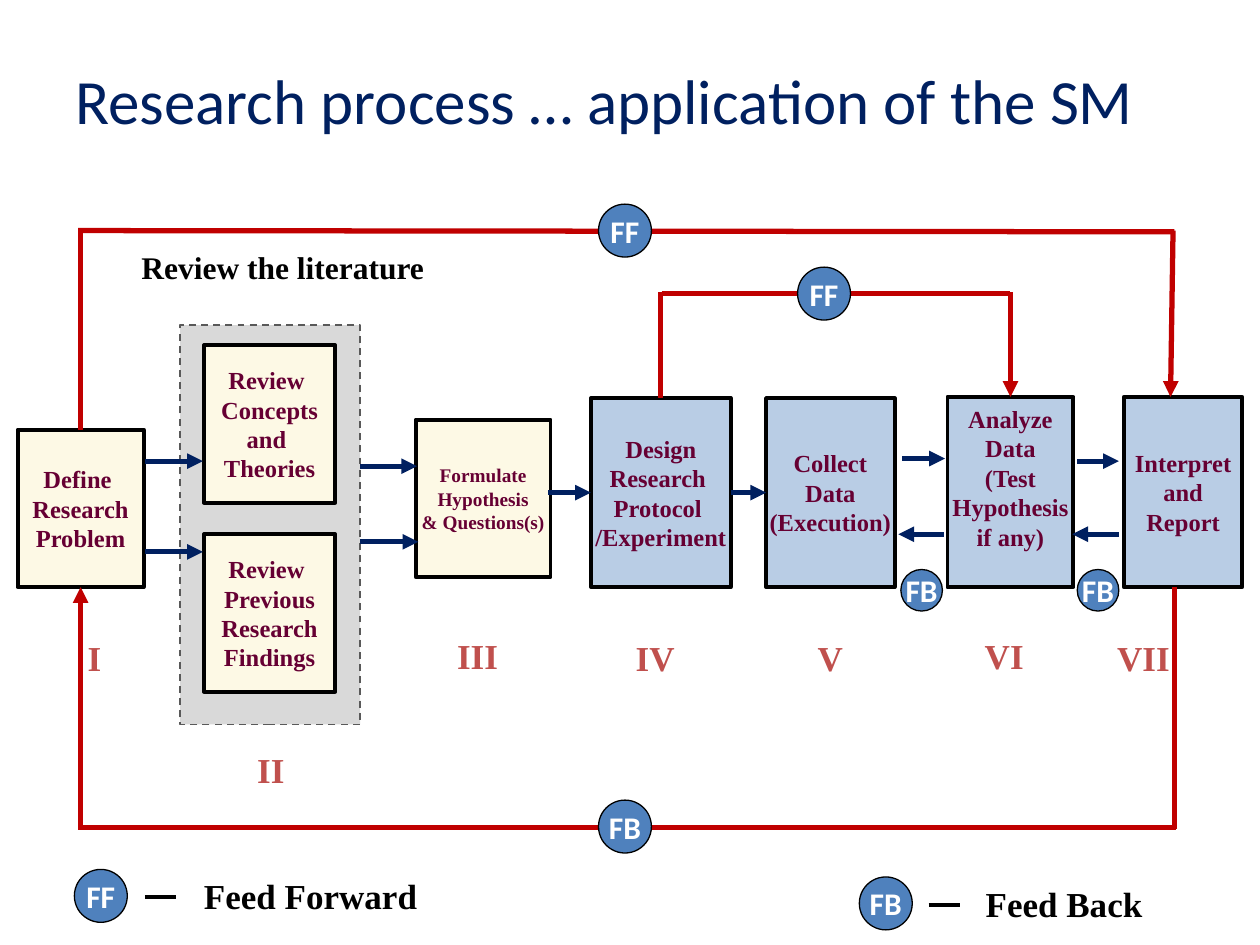
from pptx import Presentation
from pptx.dml.color import RGBColor
from pptx.enum.dml import MSO_LINE
from pptx.enum.shapes import MSO_CONNECTOR, MSO_SHAPE
from pptx.enum.text import MSO_ANCHOR, PP_ALIGN
from pptx.oxml.ns import qn
from pptx.util import Inches, Pt
from lxml.etree import SubElement

NAVY = RGBColor(0x00, 0x20, 0x60)
RED = RGBColor(0xC0, 0x00, 0x00)
BRICK = RGBColor(0xC0, 0x50, 0x4D)
PLUM = RGBColor(0x66, 0x00, 0x33)
CREAM = RGBColor(0xFD, 0xF9, 0xE5)
PALE_BLUE = RGBColor(0xB9, 0xCD, 0xE5)
BLUE = RGBColor(0x4F, 0x81, 0xBD)
GREY = RGBColor(0xD9, 0xD9, 0xD9)
DARK_GREY = RGBColor(0x59, 0x59, 0x59)
BLACK = RGBColor(0, 0, 0)
WHITE = RGBColor(0xFF, 0xFF, 0xFF)
SERIF, SANS = "Times New Roman", "Calibri"
TOP, LEFT, BOTTOM, RIGHT = range(4)
COLS, ROWS = 100, 75


def write(sp, text, size=14, color=PLUM, font=SERIF, bold=True,
          align=PP_ALIGN.CENTER, wrap=True):
    """Fill a shape with text, one paragraph per line."""
    tf = sp.text_frame
    tf.word_wrap = wrap
    tf.vertical_anchor = MSO_ANCHOR.MIDDLE
    for i, line in enumerate(text.split("\n")):
        p = tf.paragraphs[0] if i == 0 else tf.add_paragraph()
        p.alignment = align
        r = p.add_run()
        r.text = line
        r.font.size, r.font.name, r.font.bold = Pt(size), font, bold
        r.font.color.rgb = color


class Diagram:
    """Draws on one slide; all lengths are columns and rows of a 100 x 75 grid."""

    def __init__(self, prs):
        self.s = prs.slides.add_slide(prs.slide_layouts[6])
        self.col = prs.slide_width / COLS
        self.row = prs.slide_height / ROWS

    def place(self, x, y):
        return round(x * self.col), round(y * self.row)

    def shape(self, kind, x, y, w, h, fill, line=BLACK, width=2.25):
        sp = self.s.shapes.add_shape(kind, *self.place(x, y), *self.place(w, h))
        sp.shadow.inherit = False
        sp.fill.solid()
        sp.fill.fore_color.rgb = fill
        sp.line.color.rgb = line
        sp.line.width = Pt(width)
        return sp

    def box(self, text, x, y, w, h, fill, size=14):
        sp = self.shape(MSO_SHAPE.RECTANGLE, x, y, w, h, fill)
        write(sp, text, size=size, wrap=False)
        return sp

    def badge(self, text, x, y, d=4.2):
        sp = self.shape(MSO_SHAPE.OVAL, x, y, d, d, BLUE, width=0.75)
        write(sp, text, size=18, color=WHITE, font=SANS, wrap=False)

    def label(self, text, x, y, w, h, **fmt):
        sp = self.s.shapes.add_textbox(*self.place(x, y), *self.place(w, h))
        write(sp, text, **fmt)

    def line(self, start, end, color, width=3, arrow=False):
        """Each end is a grid point or a (shape, side) pair to join."""
        points = [(0, 0) if hasattr(e[0], "text_frame") else e for e in (start, end)]
        c = self.s.shapes.add_connector(
            MSO_CONNECTOR.STRAIGHT, *self.place(*points[0]), *self.place(*points[1]))
        for e, connect in ((start, c.begin_connect), (end, c.end_connect)):
            if hasattr(e[0], "text_frame"):
                connect(*e)
        c.line.color.rgb = color
        c.line.width = Pt(width)
        if arrow:
            SubElement(c.line._get_or_add_ln(), qn("a:tailEnd"), type="triangle")
        SubElement(c._element.spPr, qn("a:effectLst"))

    def legend(self, mark, text, x, y, dash_x, text_x):
        self.badge(mark, x, y)
        self.line((dash_x, y + 2.2), (dash_x + 2.5, y + 2.2), BLACK, 2.25)
        self.label(text, text_x, y, 22.5, 4.2, size=20, color=BLACK)


def main():
    prs = Presentation()
    prs.slide_width, prs.slide_height = Inches(10), Inches(7.5)
    d = Diagram(prs)

    d.label("Research process … application of the SM", 5, 2.1, 89.9, 11.6,
            size=36, color=NAVY, font=SANS, bold=False, align=PP_ALIGN.LEFT)
    d.label("Review the literature", 8.3, 19.1, 28.3, 4.2, size=18, color=BLACK)

    # Stages
    group = d.shape(MSO_SHAPE.RECTANGLE, 14.3, 25.8, 14.3, 31.7, GREY, DARK_GREY, 1)
    group.line.dash_style = MSO_LINE.DASH
    define = d.box("Define \nResearch\nProblem", 1.4, 34.1, 10, 12.5, CREAM)
    d.box("Review \nConcepts\nand \nTheories", 16.2, 27.4, 10.4, 12.5, CREAM)
    d.box("Review \nPrevious\nResearch\nFindings", 16.2, 42.4, 10.4, 12.5, CREAM)
    d.box("Formulate\nHypothesis\n& Questions(s)", 33, 33.3, 10.7, 12.5, CREAM, size=11)
    design = d.box("Design\nResearch \nProtocol \n/Experiment",
                   46.9, 31.6, 11.1, 15, PALE_BLUE)
    collect = d.box("Collect\nData\n(Execution)", 60.8, 31.6, 10.2, 15, PALE_BLUE)
    analyze = d.box("Analyze\nData\n(Test\nHypothesis\nif any)",
                    75.2, 31.5, 10, 15.1, PALE_BLUE)
    analyze.text_frame.margin_bottom = Inches(0.28)
    d.box("Interpret\nand\nReport", 89.2, 31.5, 9.4, 15.1, PALE_BLUE)

    # Steps between stages
    for x1, x2, y in ((11.5, 16.1, 36.6), (11.5, 16.1, 43.8),
                      (28.6, 33.1, 37), (28.6, 33.2, 43),
                      (71.6, 75, 36.4), (85.5, 88.8, 36.6),
                      (74.9, 71.3, 42.4), (88.8, 85.1, 42.4)):
        d.line((x1, y), (x2, y), NAVY, arrow=True)
    d.line((43.5, 39.1), (design, LEFT), NAVY, arrow=True)
    d.line((design, RIGHT), (collect, LEFT), NAVY, arrow=True)

    # Feed forward and feed back loops
    d.line((6.4, 18.3), (define, TOP), RED)
    d.line((6.2, 18.3), (93.2, 18.4), RED)
    d.line((93.1, 18.3), (92.9, 31.5), RED, arrow=True)
    d.line((52.45, 23.2), (design, TOP), RED)
    d.line((52.5, 23.3), (80.2, 23.3), RED)
    d.line((80.2, 23.2), (analyze, TOP), RED, arrow=True)
    d.line((93.2, 46.6), (93.2, 65.8), RED)
    d.line((93.3, 65.7), (6.2, 65.7), RED)
    d.line((6.4, 65.8), (define, BOTTOM), RED, arrow=True)
    d.badge("FF", 47.5, 16.2)
    d.badge("FF", 63.3, 21.2)
    d.badge("FB", 47.5, 63.5)
    for x in (71.5, 85.5):
        d.badge("FB", x, 45.2, 3.3)

    # Stage numbers
    for numeral, x, y, w in (("I", 5, 50.5, 5), ("II", 19, 59.4, 5),
                             ("III", 35, 50.4, 5.8), ("IV", 49.1, 50.5, 5.8),
                             ("V", 63, 50.5, 5.8), ("VI", 76.8, 50.4, 5.8),
                             ("VII", 87, 50.5, 7.5)):
        d.label(numeral, x, y, w, 3.3, size=20, color=BRICK)

    d.legend("FF", "Feed Forward", 5.9, 69, 11.5, 13.4)
    d.legend("FB", "Feed Back", 68.2, 69.6, 73.7, 73.2)
    prs.save("out.pptx")


if __name__ == "__main__":
    main()
